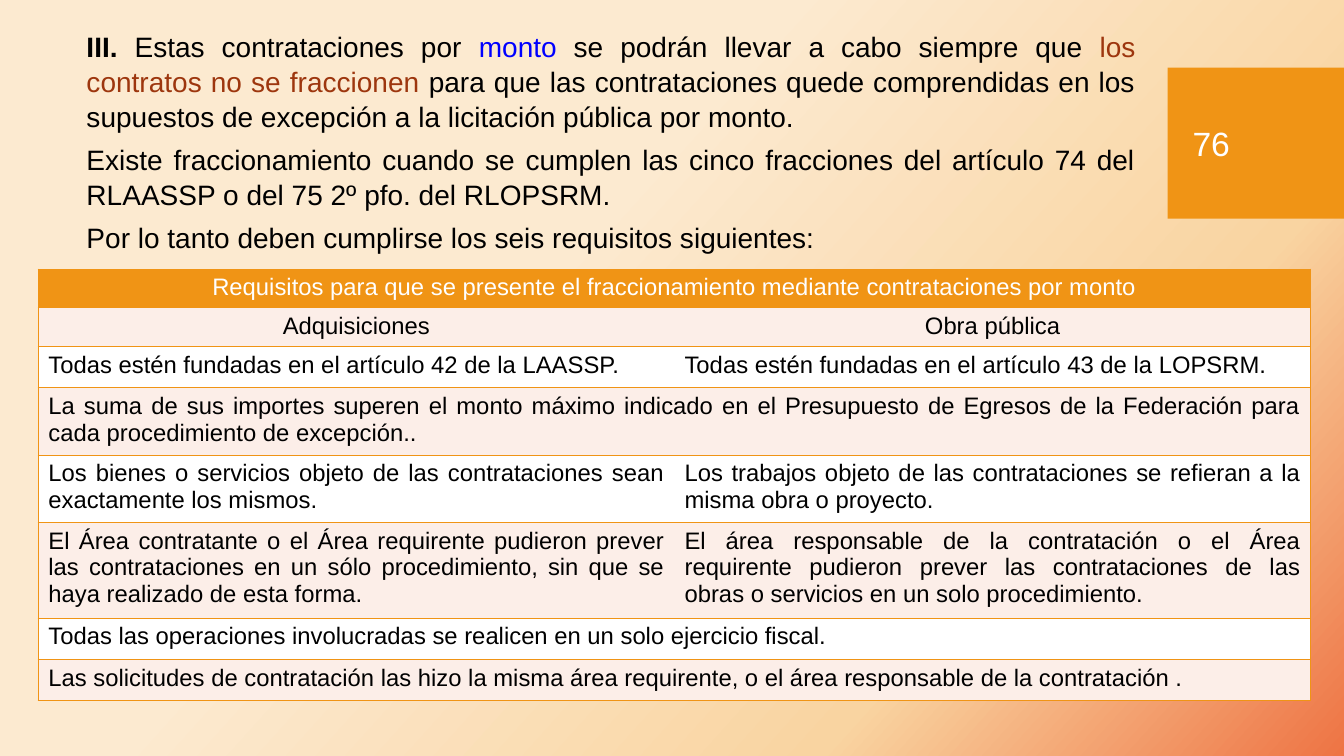
from copy import deepcopy

from lxml import etree
from pptx import Presentation
from pptx.dml.color import RGBColor
from pptx.enum.shapes import MSO_SHAPE
from pptx.enum.text import MSO_ANCHOR, PP_ALIGN
from pptx.oxml.ns import qn
from pptx.util import Inches, Pt

RECTANGLE = MSO_SHAPE.RECTANGLE
MIDDLE = MSO_ANCHOR.MIDDLE
LEFT, CENTER, JUSTIFY = PP_ALIGN.LEFT, PP_ALIGN.CENTER, PP_ALIGN.JUSTIFY
ORANGE, CREAM, WHITE, BLACK = "F09415", "FCEEE8", "FFFFFF", "000000"
BLUE, RUST = "0000FF", "9D360E"


def color(value):
    return RGBColor.from_string(value)


def write(para, text, size=20, ink=BLACK, bold=False, align=JUSTIFY):
    para.alignment = align
    span = para.add_run()
    span.text = text
    span.font.name = "Arial"
    span.font.size = Pt(size)
    span.font.bold = bold
    span.font.color.rgb = color(ink)


deck = Presentation()
deck.slide_width, deck.slide_height = Inches(13.33), Inches(7.5)
page = deck.slides.add_slide(deck.slide_layouts[6])

# Background gradient with three stops
fill = page.background.fill
fill.gradient()
fill.gradient_angle = 360 - 42
stop_list = page.background._cSld.find(".//" + qn("a:gsLst"))
stop_list.append(deepcopy(stop_list[-1]))
for stop, (position, tint) in zip(
        fill.gradient_stops, [(0.39, "FCEAD0"), (0.74, "F9D4A1"), (1, "EE7444")]):
    stop.position = position
    stop.color.rgb = color(tint)

# Page number block
block = page.shapes.add_shape(
    RECTANGLE, Inches(11.58), Inches(0.67), Inches(1.75), Inches(1.5))
block.shadow.inherit = False
block.fill.solid()
block.fill.fore_color.rgb = color(ORANGE)
block.line.fill.background()

number = page.shapes.add_textbox(
    Inches(11.73), Inches(0.82), Inches(1.26), Inches(1.19)).text_frame
number.word_wrap = True
number.vertical_anchor = MIDDLE
write(number.paragraphs[0], "76", size=24, ink=WHITE, align=LEFT)

# Introductory text
intro = page.shapes.add_textbox(
    Inches(0.76), Inches(0.23), Inches(10.6), Inches(6.67)).text_frame
intro.word_wrap = True
paragraphs = [
    [("III. ", BLACK, True),
     ("Estas contrataciones por ", BLACK, False),
     ("monto", BLUE, False),
     (" se podrán llevar a cabo siempre que ", BLACK, False),
     ("los contratos no se fraccionen", RUST, False),
     (" para que las contrataciones quede comprendidas en los supuestos de "
      "excepción a la licitación pública por monto.", BLACK, False)],
    [("Existe fraccionamiento cuando se cumplen las cinco fracciones del "
      "artículo 74 del RLAASSP o del 75 2º pfo. del RLOPSRM.", BLACK, False)],
    [("Por lo tanto deben cumplirse los seis requisitos siguientes:", BLACK, False)],
]
for index, spans in enumerate(paragraphs):
    para = intro.add_paragraph() if index else intro.paragraphs[0]
    para.line_spacing = 1.04
    para.space_before = Pt(6 if index else 0)
    for text, ink, bold in spans:
        write(para, text, ink=ink, bold=bold)

# Requirements table: height and texts of each row; one text spans both columns
rows = [
    (0.37, ["Requisitos para que se presente el fraccionamiento mediante "
            "contrataciones por monto"]),
    (0.37, ["Adquisiciones", "Obra pública"]),
    (0.41, ["Todas estén fundadas en el artículo 42 de la LAASSP.",
            "Todas estén fundadas en el artículo 43 de la LOPSRM."]),
    (0.63, ["La suma de sus importes superen el monto máximo indicado en el "
            "Presupuesto de Egresos de la Federación para cada procedimiento "
            "de excepción.."]),
    (0.63, ["Los bienes o servicios objeto de las contrataciones sean "
            "exactamente los mismos.",
            "Los trabajos objeto de las contrataciones se refieran a la misma "
            "obra o proyecto."]),
    (0.9, ["El Área contratante o el Área requirente pudieron prever las "
           "contrataciones en un sólo procedimiento, sin que se haya realizado "
           "de esta forma.",
           "El área responsable de la contratación o el Área requirente "
           "pudieron prever las contrataciones de las obras o servicios en un "
           "solo procedimiento."]),
    (0.41, ["Todas las operaciones involucradas se realicen en un solo "
            "ejercicio fiscal."]),
    (0.41, ["Las solicitudes de contratación las hizo la misma área requirente, "
            "o el área responsable de la contratación ."]),
]
table = page.shapes.add_table(
    len(rows), 2, Inches(0.38), Inches(2.67), Inches(12.62),
    Inches(sum(height for height, texts in rows))).table
for column in table.columns:
    column.width = Inches(6.31)

for row, (height, texts) in enumerate(rows):
    table.rows[row].height = Inches(height)
    merged = len(texts) == 1
    if merged:
        table.cell(row, 0).merge(table.cell(row, 1))
    for column in range(2):
        cell = table.cell(row, column)
        cell.fill.solid()
        cell.fill.fore_color.rgb = color(
            ORANGE if row == 0 else CREAM if row % 2 else WHITE)
        if column < len(texts):
            write(cell.text_frame.paragraphs[0], texts[column], size=17,
                  ink=BLACK if row else WHITE, align=JUSTIFY if row > 1 else CENTER)
        # Borders: no line between the two columns
        drawn = {"lnL": merged or column == 0, "lnR": merged or column == 1,
                 "lnT": True, "lnB": True}
        properties = cell._tc.get_or_add_tcPr()
        for place, (side, visible) in enumerate(drawn.items()):
            border = etree.Element(qn("a:" + side), w=str(Pt(1)))
            properties.insert(place, border)
            if visible:
                paint = etree.SubElement(border, qn("a:solidFill"))
                etree.SubElement(paint, qn("a:srgbClr"), val=ORANGE)
            else:
                etree.SubElement(border, qn("a:noFill"))

deck.save("out.pptx")
